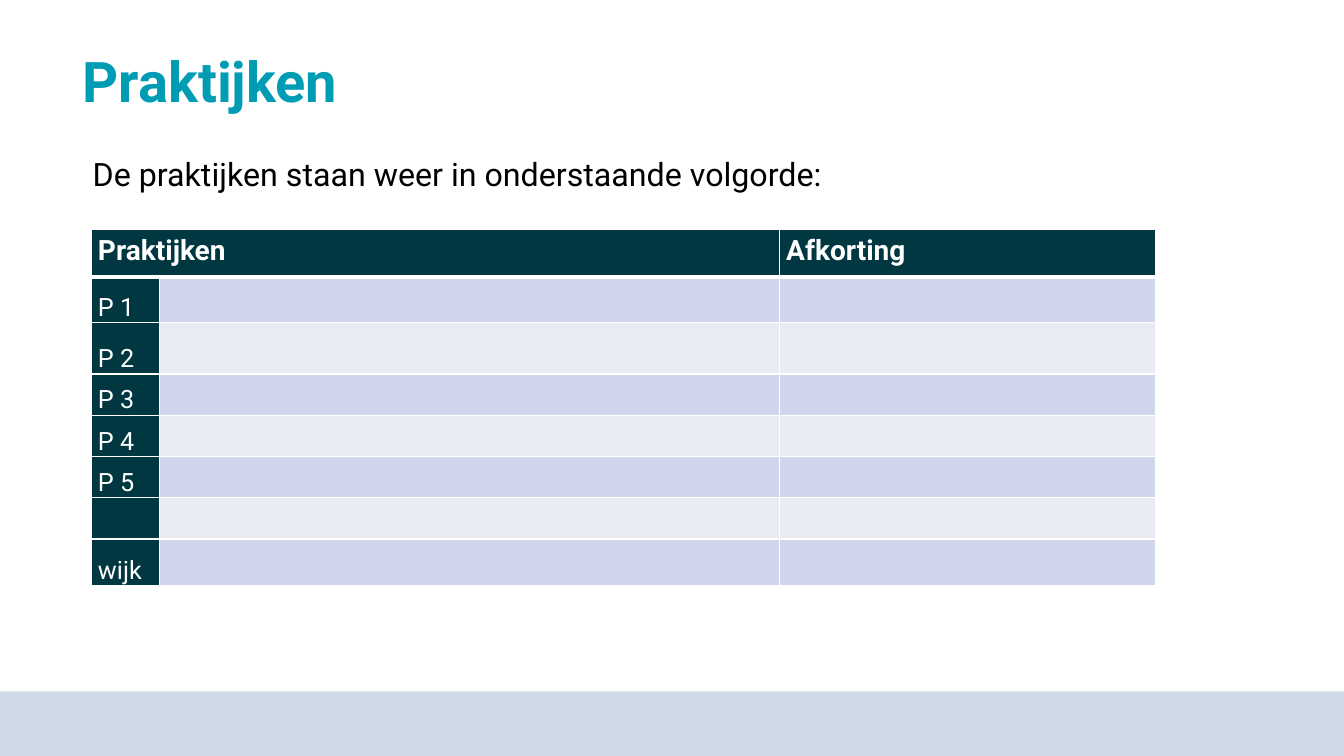
from dataclasses import dataclass

import pptx
import pptx.dml.color
import pptx.enum.shapes
import pptx.enum.text
import pptx.oxml
import pptx.oxml.ns
import pptx.util

Pt = pptx.util.Pt
Anchor = pptx.enum.text.MSO_ANCHOR
AutoSize = pptx.enum.text.MSO_AUTO_SIZE

FONT = "Roboto"
COLOURS = {
    "title": "009CB4",
    "text": "000000",
    "white": "FFFFFF",
    "dark": "003741",
    "odd": "CFD5EA",
    "even": "E9EBF5",
    "footer": "CED9E5",
}
COLUMN_WIDTHS = [49, 442.6, 269]


@dataclass
class PracticeRow:
    label: str
    height: float


@dataclass
class Heading:
    text: str
    left: float
    top: float
    width: float
    height: float
    size: float
    colour: str
    bold: bool
    line_spacing: float
    auto_size: AutoSize


HEADER_HEIGHT = 33.8
PRACTICE_ROWS = [
    PracticeRow("P 1", 32.4),
    PracticeRow("P 2", 36.7),
    PracticeRow("P 3", 29.5),
    PracticeRow("P 4", 29.5),
    PracticeRow("P 5", 29.5),
    PracticeRow("", 29.5),
    PracticeRow("wijk", 33.5),
]
TITLE = Heading("Praktijken", 51.8, 33.1, 847.4, 54, 40, "title", True, 0.9, AutoSize.NONE)
INTRODUCTION = Heading(
    "De praktijken staan weer in onderstaande volgorde:",
    59, 106.6, 822.2, 35.3, 23, "text", False, 1, AutoSize.SHAPE_TO_FIT_TEXT,
)


def rgb(colour: str) -> pptx.dml.color.RGBColor:
    return pptx.dml.color.RGBColor.from_string(COLOURS[colour])


def add_run(paragraph, text: str, size: float, colour: str, bold: bool) -> None:
    run = paragraph.add_run()
    run.text = text
    run.font.name = FONT
    run.font.size = Pt(size)
    run.font.bold = bold
    run.font.color.rgb = rgb(colour)


def fill_placeholder(placeholder, heading: Heading) -> None:
    placeholder.left, placeholder.top = Pt(heading.left), Pt(heading.top)
    placeholder.width, placeholder.height = Pt(heading.width), Pt(heading.height)
    frame = placeholder.text_frame
    frame.word_wrap = True
    frame.auto_size = heading.auto_size
    frame.vertical_anchor = Anchor.MIDDLE
    paragraph = frame.paragraphs[0]
    paragraph.alignment = pptx.enum.text.PP_ALIGN.LEFT
    paragraph.line_spacing = heading.line_spacing
    paragraph.space_before = Pt(0)
    properties = paragraph._p.get_or_add_pPr()
    properties.set("marL", "0")
    properties.set("indent", "0")
    properties.append(pptx.oxml.parse_xml(f'<a:buNone {pptx.oxml.ns.nsdecls("a")}/>'))
    add_run(paragraph, heading.text, heading.size, heading.colour, heading.bold)


def format_cell(cell, colour: str, top: float = 1, bottom: float = 1) -> None:
    cell.fill.solid()
    cell.fill.fore_color.rgb = rgb(colour)
    properties = cell._tc.get_or_add_tcPr()
    borders = {"lnL": 1, "lnR": 1, "lnT": top, "lnB": bottom}
    for position, (side, width) in enumerate(borders.items()):
        properties.insert(position, pptx.oxml.parse_xml(
            f'<a:{side} {pptx.oxml.ns.nsdecls("a")} w="{Pt(width)}">'
            f'<a:solidFill><a:srgbClr val="{COLOURS["white"]}"/></a:solidFill></a:{side}>'
        ))


def write_cell(cell, text: str, size: float, bold: bool, anchor: Anchor) -> None:
    cell.margin_left = cell.margin_right = Pt(5)
    cell.margin_top = cell.margin_bottom = Pt(0)
    cell.vertical_anchor = anchor
    paragraph = cell.text_frame.paragraphs[0]
    paragraph.line_spacing = 1.15
    paragraph.space_after = Pt(10)
    add_run(paragraph, text, size, "white", bold)


def add_practice_table(slide) -> None:
    heights = [HEADER_HEIGHT] + [row.height for row in PRACTICE_ROWS]
    table = slide.shapes.add_table(
        len(heights), len(COLUMN_WIDTHS),
        Pt(65), Pt(164.2), Pt(sum(COLUMN_WIDTHS)), Pt(sum(heights)),
    ).table
    table.first_row = False
    table.horz_banding = False
    for column, width in zip(table.columns, COLUMN_WIDTHS):
        column.width = Pt(width)
    for row, height in zip(table.rows, heights):
        row.height = Pt(height)

    for cell in table.rows[0].cells:
        format_cell(cell, "dark", bottom=3)
    table.cell(0, 0).merge(table.cell(0, 1))
    for column, text in ((0, "Praktijken"), (2, "Afkorting")):
        write_cell(table.cell(0, column), text, 20, True, Anchor.TOP)

    for number, practice in enumerate(PRACTICE_ROWS, start=1):
        band = "odd" if number % 2 else "even"
        for column, colour in enumerate(("dark", band, band)):
            format_cell(table.cell(number, column), colour, top=3 if number == 1 else 1)
        if practice.label:
            write_cell(table.cell(number, 0), practice.label, 18, False, Anchor.BOTTOM)


def add_footer_band(slide) -> None:
    band = slide.shapes.add_shape(
        pptx.enum.shapes.MSO_SHAPE.RECTANGLE, Pt(0), Pt(493.9), Pt(960), Pt(46.1)
    )
    band.shadow.inherit = False
    band.fill.solid()
    band.fill.fore_color.rgb = rgb("footer")
    band.line.fill.background()


def main() -> None:
    presentation = pptx.Presentation()
    presentation.slide_width, presentation.slide_height = Pt(960), Pt(540)
    slide = presentation.slides.add_slide(presentation.slide_layouts[1])
    add_footer_band(slide)
    fill_placeholder(slide.shapes.title, TITLE)
    fill_placeholder(slide.placeholders[1], INTRODUCTION)
    add_practice_table(slide)
    presentation.save("out.pptx")


if __name__ == "__main__":
    main()
